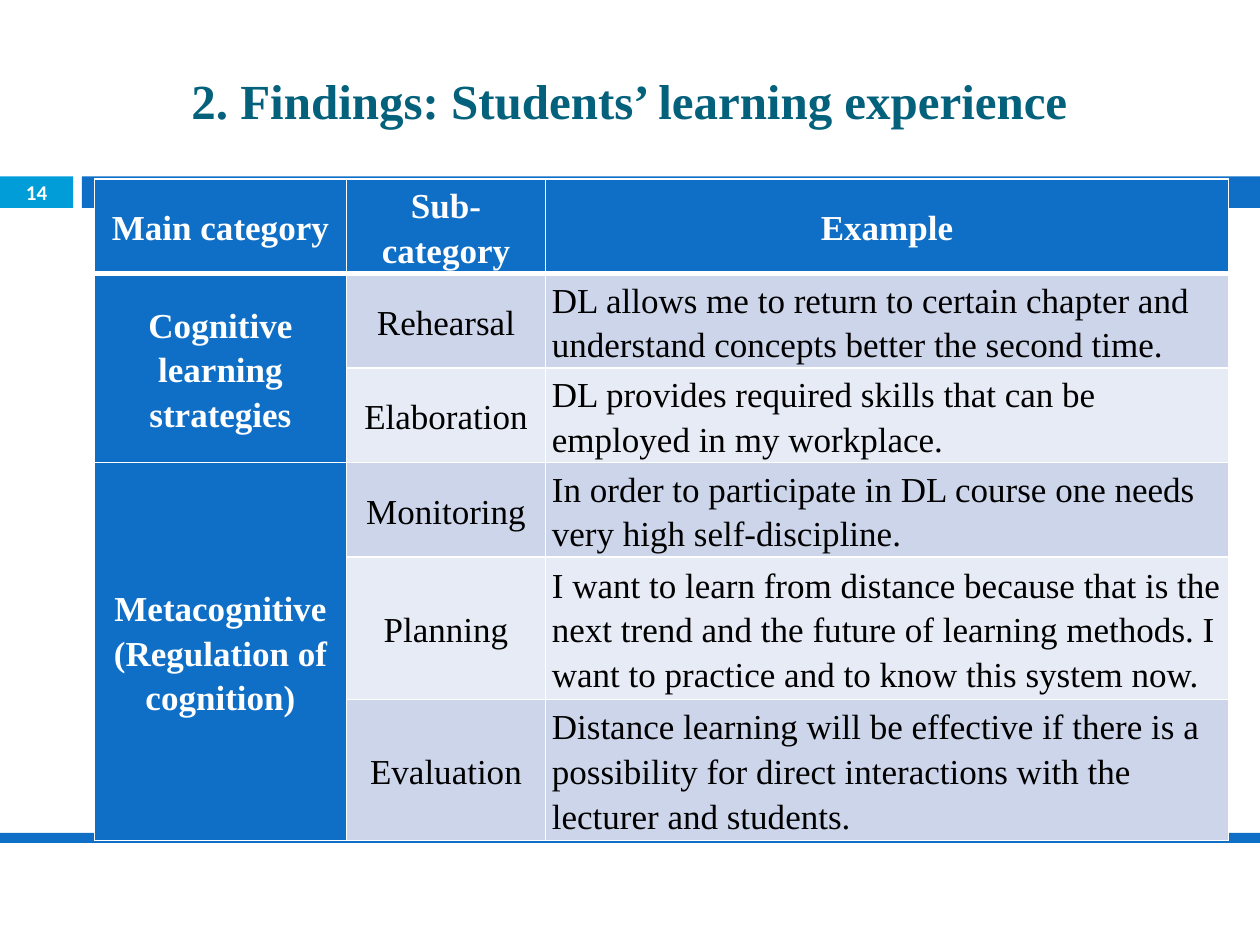
from dataclasses import dataclass

from lxml.etree import SubElement
from pptx import Presentation
from pptx.dml.color import RGBColor
from pptx.enum.shapes import MSO_SHAPE as Preset
from pptx.enum.text import MSO_ANCHOR as Anchor, MSO_AUTO_SIZE as AutoSize, PP_ALIGN as Align
from pptx.oxml.ns import qn
from pptx.util import Inches, Pt


@dataclass(frozen=True)
class Theme:
    """Colours, fonts and type sizes of the slide."""
    blue: str = "0F6FC6"
    cyan: str = "009DD9"
    teal: str = "04617B"
    white: str = "FFFFFF"
    black: str = "000000"
    bands: tuple = ("CCD5EA", "E7EBF5")
    serif: str = "Times New Roman"
    sans: str = "Calibri"
    title_size: float = 28
    table_size: float = 20
    number_size: float = 12
    line_spacing: float = 1.15


THEME = Theme()
WIDTH, HEIGHT = Inches(10), Inches(7.5)
COLUMNS = (2, 1.58, 5.42)
ROWS = (0.75, 0.75, 0.75, 0.75, 1.13, 1.12)
HEADER = ("Main category", "Sub-category", "Example")
CATEGORIES = {
    "Cognitive learning strategies": (
        ("Rehearsal", "DL allows me to return to certain chapter and understand concepts better the second time."),
        ("Elaboration", "DL provides required skills that can be employed in my workplace."),
    ),
    "Metacognitive\n(Regulation of cognition)": (
        ("Monitoring", "In order to participate in DL course one needs very high self-discipline."),
        ("Planning", "I want to learn from distance because that is the next trend and the future of "
                     "learning methods. I want to practice and to know this system now."),
        ("Evaluation", "Distance learning will be effective if there is a possibility for direct "
                       "interactions with the lecturer and students."),
    ),
}


def apply(target, formats):
    """Set every attribute named in formats on target."""
    for name, value in formats.items():
        setattr(target, name, value)


def place(left, top, width, height):
    """Turn inches into the position attributes of a shape."""
    return {name: Inches(value) for name, value in
            zip(("left", "top", "width", "height"), (left, top, width, height))}


def paint(target, color):
    """Give a shape or a cell a solid fill."""
    target.fill.solid()
    target.fill.fore_color.rgb = RGBColor.from_string(color)


def write(text_frame, text, size, color, font=THEME.serif, bold=True, align=Align.CENTER, spacing=None):
    """Fill a text frame with evenly formatted paragraphs."""
    text_frame.text = text
    for paragraph in text_frame.paragraphs:
        apply(paragraph, {"alignment": align, "line_spacing": spacing})
        for run in paragraph.runs:
            apply(run.font, {"name": font, "size": Pt(size), "bold": bold})
            run.font.color.rgb = RGBColor.from_string(color)


def add_band(slide, color, left, top, width, height):
    """Add a plain coloured bar."""
    shape = slide.shapes.add_shape(Preset.RECTANGLE, **place(left, top, width, height))
    shape.shadow.inherit = False
    paint(shape, color)
    shape.line.fill.background()
    return shape


def add_number(shape, number):
    """Write the slide number in its bar."""
    frame = shape.text_frame
    apply(frame, {"vertical_anchor": Anchor.MIDDLE, "word_wrap": True,
                  "margin_top": 0, "margin_bottom": 0})
    write(frame, number, THEME.number_size, THEME.white, THEME.sans)


def format_title(slide, text):
    """Place and write the title."""
    title = slide.shapes.title
    apply(title, place(0.08, 0.42, 9.83, 1.08))
    apply(title.text_frame, {"vertical_anchor": Anchor.MIDDLE, "word_wrap": True,
                             "auto_size": AutoSize.NONE, "margin_bottom": Inches(0.39)})
    write(title.text_frame, text, THEME.title_size, THEME.teal)


def add_borders(cell, **widths):
    """Draw white cell borders, one point wide unless given otherwise."""
    properties = cell._tc.get_or_add_tcPr()
    for position, side in enumerate("LRTB"):
        line = SubElement(properties, qn(f"a:ln{side}"), w=str(Pt(widths.get(side, 1))))
        fill = SubElement(line, qn("a:solidFill"))
        SubElement(fill, qn("a:srgbClr"), val=THEME.white)
        properties.insert(position, line)


def format_cell(cell, text, fill, color=THEME.white, bold=True, align=Align.CENTER, **widths):
    """Write one table cell with its fill and borders."""
    apply(cell, {"vertical_anchor": Anchor.MIDDLE, "margin_left": Inches(0.05),
                 "margin_right": Inches(0.05), "margin_top": 0, "margin_bottom": 0})
    write(cell.text_frame, text, THEME.table_size, color, bold=bold, align=align,
          spacing=THEME.line_spacing)
    paint(cell, fill)
    add_borders(cell, **widths)


def add_findings(slide):
    """Add the table of categories, sub-categories and examples."""
    frame = slide.shapes.add_table(len(ROWS), len(COLUMNS),
                                   **place(0.75, 1.42, sum(COLUMNS), sum(ROWS)))
    table = frame.table
    for column, width in zip(table.columns, COLUMNS):
        column.width = Inches(width)
    for row, height in zip(table.rows, ROWS):
        row.height = Inches(height)
    for index, heading in enumerate(HEADER):
        format_cell(table.cell(0, index), heading, THEME.blue, B=3)
    row = 1
    for category, entries in CATEGORIES.items():
        first = row
        for name, example in entries:
            top = 3 if row == 1 else 1
            fill = THEME.bands[(row - 1) % 2]
            format_cell(table.cell(row, 0), category if row == first else "", THEME.blue, T=top)
            format_cell(table.cell(row, 1), name, fill, THEME.black, False, T=top)
            format_cell(table.cell(row, 2), example, fill, THEME.black, False, Align.LEFT, T=top)
            row += 1
        table.cell(first, 0).merge(table.cell(row - 1, 0))


def main():
    """Build the slide and save it."""
    presentation = Presentation()
    apply(presentation, {"slide_width": WIDTH, "slide_height": HEIGHT})
    slide = presentation.slides.add_slide(presentation.slide_layouts[5])
    format_title(slide, "2. Findings: Students’ learning experience")
    add_number(add_band(slide, THEME.cyan, 0, 1.4, 0.58, 0.25), "14")
    add_band(slide, THEME.blue, 0.65, 1.4, 9.35, 0.25)
    add_band(slide, THEME.blue, 0, 6.61, 10, 0.08)
    add_findings(slide)
    presentation.save("out.pptx")


if __name__ == "__main__":
    main()
